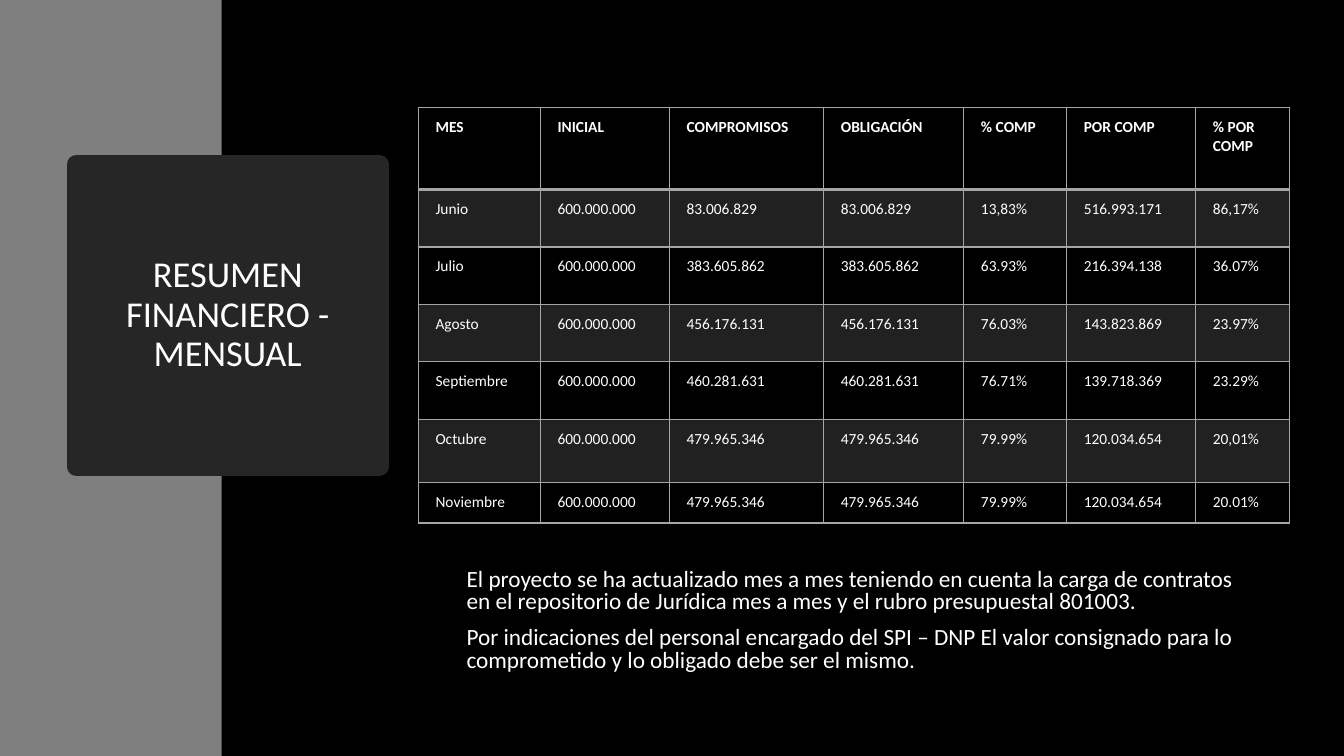
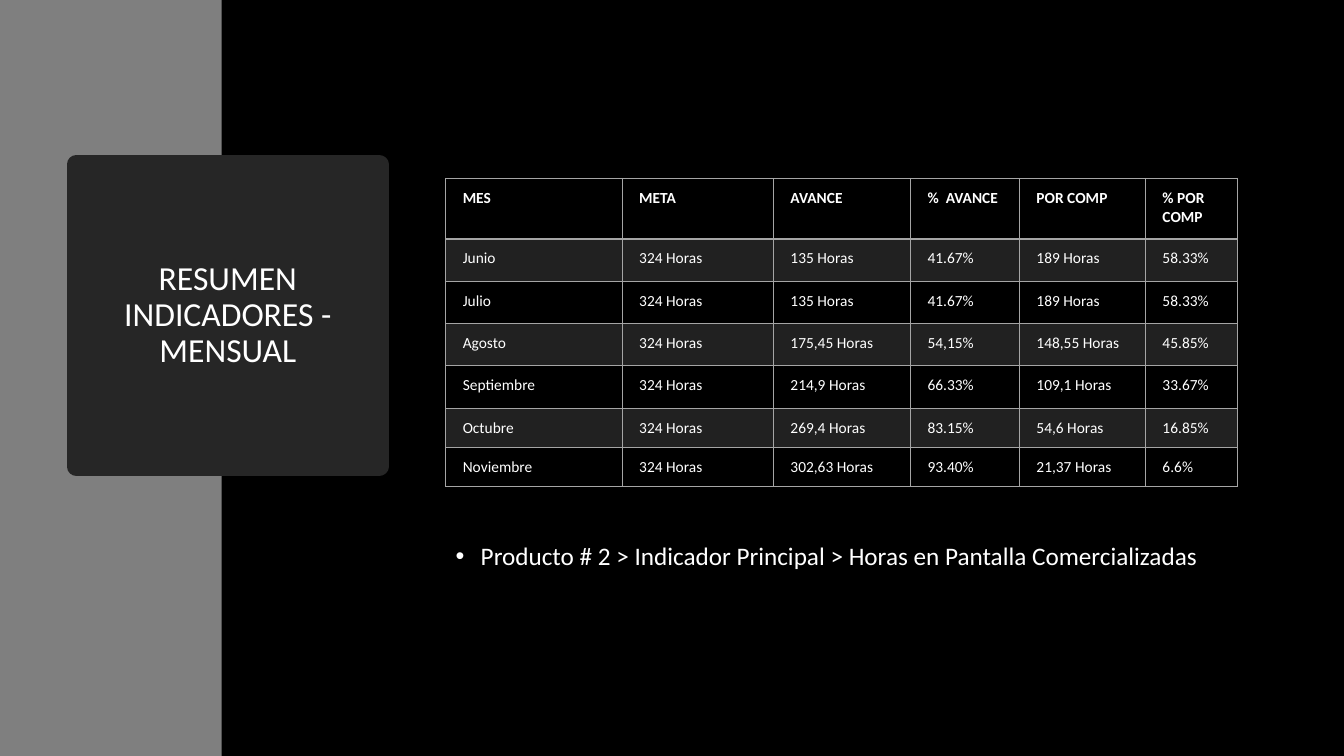
import lxml.etree
import pptx
import pptx.dml.color
import pptx.enum.shapes
import pptx.enum.text
import pptx.oxml.ns
import pptx.util

Inches = pptx.util.Inches
Pt = pptx.util.Pt
qn = pptx.oxml.ns.qn

COLORS = {
    "background": "000000",
    "band": "7F7F7F",
    "title_box": "262626",
    "text": "FFFFFF",
    "grid": "A5A5A5",
}
FONT = "Calibri"
CELL_SIZE = 11
STRIPE_OPACITY = 20


def rgb(name):
    return pptx.dml.color.RGBColor.from_string(COLORS[name])


def add_child(parent, tag, **attributes):
    return lxml.etree.SubElement(parent, qn(tag), attributes)


class Deck:
    def __init__(self):
        self.presentation = pptx.Presentation()
        self.presentation.slide_width = Inches(13.33)
        self.presentation.slide_height = Inches(7.5)
        self.slide = None

    def new_slide(self, title, title_size):
        self.slide = self.presentation.slides.add_slide(self.presentation.slide_layouts[6])
        background = self.slide.background.fill
        background.solid()
        background.fore_color.rgb = rgb("background")
        self.block("band", 0, 0, 2.2, 7.5).line.fill.background()
        self.title(title, title_size)

    def block(self, color, left, top, width, height):
        block = self.slide.shapes.add_shape(
            pptx.enum.shapes.MSO_SHAPE.RECTANGLE,
            Inches(left), Inches(top), Inches(width), Inches(height))
        block.shadow.inherit = False
        block.fill.solid()
        block.fill.fore_color.rgb = rgb(color)
        return block

    def title(self, text, size):
        box = self.block("title_box", 0.76, 1.63, 3, 3)
        box.line.color.rgb = rgb("title_box")
        box.line.width = Pt(13.75)
        add_child(box._element.spPr.find(qn("a:ln")), "a:round")
        frame = box.text_frame
        frame.word_wrap = True
        frame.vertical_anchor = pptx.enum.text.MSO_ANCHOR.MIDDLE
        paragraph = frame.paragraphs[0]
        paragraph.alignment = pptx.enum.text.PP_ALIGN.CENTER
        paragraph.line_spacing = 0.9
        self.run(paragraph, text, size)

    def run(self, paragraph, text, size, bold=False):
        run = paragraph.add_run()
        run.text = text
        run.font.name = FONT
        run.font.size = Pt(size)
        run.font.bold = bold
        run.font.color.rgb = rgb("text")

    def body(self, left, top, texts, size, line_spacing, bullet=None):
        box = self.slide.shapes.add_textbox(
            Inches(left), Inches(top), Inches(7.86), Inches(1.41))
        frame = box.text_frame
        frame.word_wrap = True
        for index, text in enumerate(texts):
            paragraph = frame.add_paragraph() if index else frame.paragraphs[0]
            paragraph.line_spacing = line_spacing
            paragraph.space_before = Pt(10)
            if bullet:
                properties = paragraph._p.get_or_add_pPr()
                properties.set("marL", str(Inches(0.25)))
                properties.set("indent", str(-Inches(0.25)))
                add_child(properties, "a:buFont", typeface="Arial")
                add_child(properties, "a:buChar", char=bullet)
            self.run(paragraph, text, size)

    def table(self, left, top, widths, heights, rows):
        table = self.slide.shapes.add_table(
            len(rows), len(widths), Inches(left), Inches(top),
            Inches(sum(widths)), Inches(sum(heights))).table
        table.horz_banding = False
        for column, width in zip(table.columns, widths):
            column.width = Inches(width)
        for row, height in zip(table.rows, heights):
            row.height = Inches(height)
        for row_index, values in enumerate(rows):
            for column_index, value in enumerate(values):
                self.cell(table.cell(row_index, column_index), value, row_index)

    def cell(self, cell, text, row_index):
        cell.margin_left = Inches(0.17)
        cell.margin_right = cell.margin_top = cell.margin_bottom = Inches(0.1)
        self.run(cell.text_frame.paragraphs[0], text, CELL_SIZE, bold=row_index == 0)
        properties = cell._tc.get_or_add_tcPr()
        widths = {
            "a:lnL": 1,
            "a:lnR": 1,
            "a:lnT": 2 if row_index == 1 else 1,
            "a:lnB": 2 if row_index == 0 else 1,
        }
        for tag, width in widths.items():
            line = add_child(properties, tag, w=str(Pt(width)))
            add_child(add_child(line, "a:solidFill"), "a:srgbClr", val=COLORS["grid"])
        if row_index % 2:
            cell.fill.solid()
            cell.fill.fore_color.rgb = rgb("grid")
            stripe = properties.find(qn("a:solidFill")).find(qn("a:srgbClr"))
            add_child(stripe, "a:alpha", val=str(STRIPE_OPACITY * 1000))
        else:
            cell.fill.background()


def financial_summary(deck):
    deck.new_slide("RESUMEN FINANCIERO - MENSUAL", 26)
    deck.body(4.53, 5.6, [
        "El proyecto se ha actualizado mes a mes teniendo en cuenta la carga de contratos "
        "en el repositorio de Jurídica mes a mes y el rubro presupuestal 801003.",
        "Por indicaciones del personal encargado del SPI – DNP El valor consignado para lo "
        "comprometido y lo obligado debe ser el mismo.",
    ], 16.6, 0.8)
    months = [
        ("Junio", "83.006.829", "13,83%", "516.993.171", "86,17%"),
        ("Julio", "383.605.862", "63.93%", "216.394.138", "36.07%"),
        ("Agosto", "456.176.131", "76.03%", "143.823.869", "23.97%"),
        ("Septiembre", "460.281.631", "76.71%", "139.718.369", "23.29%"),
        ("Octubre", "479.965.346", "79.99%", "120.034.654", "20,01%"),
        ("Noviembre", "479.965.346", "79.99%", "120.034.654", "20.01%"),
    ]
    header = ("MES", "INICIAL", "COMPROMISOS", "OBLIGACIÓN", "% COMP", "POR COMP", "% POR COMP")
    rows = [header] + [
        (month, "600.000.000", committed, committed, share, pending, pending_share)
        for month, committed, share, pending, pending_share in months]
    deck.table(4.15, 1.07, [1.21, 1.28, 1.53, 1.39, 1.02, 1.28, 0.93],
               [0.81] + [0.57] * 4 + [0.63, 0.4], rows)


def indicator_summary(deck):
    deck.new_slide("RESUMEN INDICADORES - MENSUAL", 24)
    deck.body(4.42, 5.34, [
        "Producto # 2 > Indicador Principal > Horas en Pantalla Comercializadas",
    ], 18, 0.9, bullet="•")
    months = [
        ("Junio", "135", "41.67%", "189", "58.33%"),
        ("Julio", "135", "41.67%", "189", "58.33%"),
        ("Agosto", "175,45", "54,15%", "148,55", "45.85%"),
        ("Septiembre", "214,9", "66.33%", "109,1", "33.67%"),
        ("Octubre", "269,4", "83.15%", "54,6", "16.85%"),
        ("Noviembre", "302,63", "93.40%", "21,37", "6.6%"),
    ]
    header = ("MES", "META", "AVANCE", "%  AVANCE", "POR COMP", "% POR COMP")
    rows = [header] + [
        (month, "324 Horas", f"{done} Horas", share, f"{pending} Horas", pending_share)
        for month, done, share, pending, pending_share in months]
    deck.table(4.42, 1.77, [1.75, 1.5, 1.36, 1.08, 1.25, 0.91],
               [0.6] + [0.42] * 4 + [0.39] * 2, rows)


def main():
    deck = Deck()
    financial_summary(deck)
    indicator_summary(deck)
    deck.presentation.save("out.pptx")


if __name__ == "__main__":
    main()
